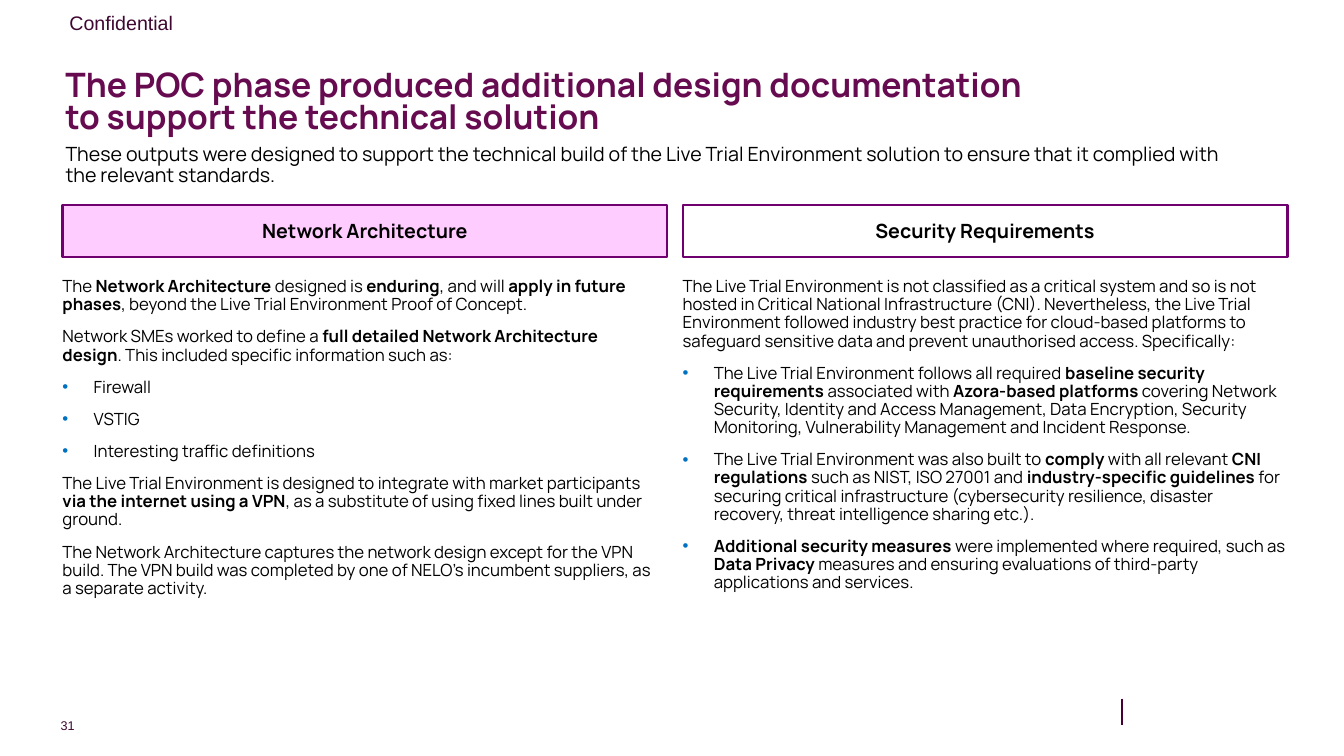
from dataclasses import dataclass

from lxml.etree import SubElement
from pptx import Presentation
from pptx.dml.color import RGBColor
from pptx.enum.shapes import MSO_CONNECTOR, MSO_SHAPE
from pptx.enum.text import MSO_ANCHOR, PP_ALIGN
from pptx.oxml.ns import qn
from pptx.util import Inches, Pt


@dataclass(frozen=True)
class Theme:
    """Colours, fonts and type sizes of the slide."""
    ink: str = "000000"
    title: str = "670B50"
    footer: str = "3F0731"
    rule: str = "460033"
    border: str = "700070"
    highlight: str = "FFCCFF"
    plain: str = "FFFFFF"
    bullet: str = "0070C0"
    text_font: str = "Manrope"
    label_font: str = "Arial"
    title_size: int = 24
    heading_size: int = 14
    body_size: int = 12
    number_size: int = 9


THEME = Theme()
MARGIN, COLUMN_WIDTH, GUTTER = 0.62, 6, 0.15
HEADING_TOP, HEADING_HEIGHT = 2.03, 0.52
BODY_TOP, BODY_HEIGHT = 2.71, 3.69
BULLET_INDENT = 0.31

TITLE = [
    "The POC phase produced additional design documentation",
    "to support the technical solution",
]
SUBTITLE = (
    "These outputs were designed to support the technical build of the Live Trial Environment "
    "solution to ensure that it complied with the relevant standards."
)
NETWORK = [
    "The **Network Architecture **designed is** enduring**, and will **apply in future phases**, "
    "beyond the Live Trial Environment Proof of Concept.",
    "Network SMEs worked to define a **full detailed Network Architecture design**. "
    "This included specific information such as:",
    "• Firewall",
    "• VSTIG",
    "• Interesting traffic definitions",
    "The Live Trial Environment is designed to integrate with market participants "
    "**via the internet using a VPN**, as a substitute of using fixed lines built under ground.",
    "The Network Architecture captures the network design except for the VPN build. The VPN build "
    "was completed by one of NELO’s incumbent suppliers, as a separate activity.",
]
SECURITY = [
    "The Live Trial Environment is not classified as a critical system and so is not hosted in "
    "Critical National Infrastructure (CNI). Nevertheless, the Live Trial Environment followed "
    "industry best practice for cloud-based platforms to safeguard sensitive data and prevent "
    "unauthorised access. Specifically:",
    "• The Live Trial Environment follows all required **baseline security requirements **"
    "associated with **Azora-based platforms **covering Network Security, Identity and Access "
    "Management, Data Encryption, Security Monitoring, Vulnerability Management and Incident "
    "Response.",
    "• The Live Trial Environment was also built to **comply** with all relevant "
    "**CNI regulations **such as NIST, ISO 27001 and **industry-specific guidelines **for "
    "securing critical infrastructure (cybersecurity resilience, disaster recovery, threat "
    "intelligence sharing etc.).",
    "• **Additional security measures **were implemented where required, such as "
    "**Data Privacy **measures and ensuring evaluations of third-party applications and services.",
]
COLUMNS = [
    ("Network Architecture", THEME.highlight, NETWORK, 0.1),
    ("Security Requirements", THEME.plain, SECURITY, 0),
]


def rgb(colour):
    """Turn a theme colour into an RGBColor."""
    return RGBColor.from_string(colour)


def style_font(font, size, colour, name=THEME.text_font, bold=None):
    """Apply the type settings to a font."""
    font.name, font.size, font.bold = name, Pt(size), bold
    font.color.rgb = rgb(colour)


def add_bullet(paragraph):
    """Give a paragraph a coloured bullet and a hanging indent."""
    properties = paragraph._p.get_or_add_pPr()
    properties.set("marL", str(Inches(BULLET_INDENT)))
    properties.set("indent", str(-Inches(BULLET_INDENT)))
    bullet_colour = SubElement(properties, qn("a:buClr"))
    SubElement(bullet_colour, qn("a:srgbClr"), val=THEME.bullet)
    SubElement(properties, qn("a:buFont"), typeface=THEME.label_font)
    SubElement(properties, qn("a:buChar"), char="•")


def add_runs(paragraph, text):
    """Write text whose double asterisks switch bold on and off."""
    for position, part in enumerate(text.split("**")):
        if part:
            run = paragraph.add_run()
            run.text = part
            if position % 2:
                run.font.bold = True


def add_text(slide, box, lines, size, colour, font=THEME.text_font, bold=None,
             insets=(0, 0.05, 0.1, 0.05), line_spacing=None, gap=0, wrap=True):
    """Add a text box with one paragraph per line."""
    frame = slide.shapes.add_textbox(*map(Inches, box)).text_frame
    frame.word_wrap = wrap
    (frame.margin_left, frame.margin_top,
     frame.margin_right, frame.margin_bottom) = map(Inches, insets)
    for index, line in enumerate(lines):
        paragraph = frame.add_paragraph() if index else frame.paragraphs[0]
        if line.startswith("• "):
            add_bullet(paragraph)
        add_runs(paragraph, line.removeprefix("• "))
        style_font(paragraph.font, size, colour, font, bold)
        if line_spacing:
            paragraph.line_spacing = line_spacing
        if index and gap:
            paragraph.space_before = Pt(gap)
    return frame


def add_heading(slide, left, text, fill):
    """Add the bordered heading of a column."""
    heading = slide.shapes.add_shape(
        MSO_SHAPE.RECTANGLE,
        *map(Inches, (left, HEADING_TOP, COLUMN_WIDTH, HEADING_HEIGHT)))
    heading.shadow.inherit = False
    heading.fill.solid()
    heading.fill.fore_color.rgb = rgb(fill)
    heading.line.color.rgb = rgb(THEME.border)
    heading.line.width = Pt(1.5)
    frame = heading.text_frame
    frame.vertical_anchor = MSO_ANCHOR.MIDDLE
    paragraph = frame.paragraphs[0]
    paragraph.alignment = PP_ALIGN.CENTER
    add_runs(paragraph, text)
    style_font(paragraph.font, THEME.heading_size, THEME.ink, bold=True)


def add_footer_rule(slide, x, top, bottom):
    """Add the short vertical rule at the foot of the slide."""
    rule = slide.shapes.add_connector(
        MSO_CONNECTOR.STRAIGHT, *map(Inches, (x, top, x, bottom)))
    rule.line.color.rgb = rgb(THEME.rule)
    rule.line.width = Pt(1.5)
    SubElement(rule._element.spPr, qn("a:effectLst"))


def main():
    """Build and save the slide."""
    deck = Presentation()
    deck.slide_width, deck.slide_height = Inches(13.33), Inches(7.5)
    slide = deck.slides.add_slide(deck.slide_layouts[6])

    number = add_text(slide, (0.59, 7.12, 0.15, 0.15), ["31"], THEME.number_size, THEME.footer,
                      THEME.label_font, insets=(0, 0, 0, 0), wrap=False)
    number.vertical_anchor = MSO_ANCHOR.MIDDLE
    number.paragraphs[0].alignment = PP_ALIGN.RIGHT
    add_text(slide, (0.59, 0.06, 5, 0.34), ["Confidential"], THEME.heading_size, THEME.footer,
             THEME.label_font, insets=(0.1, 0.05, 0.1, 0.05))
    add_footer_rule(slide, 11.13, 6.93, 7.19)

    for index, (heading, fill, body, right_inset) in enumerate(COLUMNS):
        left = MARGIN + index * (COLUMN_WIDTH + GUTTER)
        add_heading(slide, left, heading, fill)
        add_text(slide, (left, BODY_TOP, COLUMN_WIDTH, BODY_HEIGHT), body, THEME.body_size,
                 THEME.ink, insets=(0, 0.05, right_inset, 0.05), line_spacing=0.9, gap=10)

    add_text(slide, (0.65, 0.66, 11.5, 0.8), TITLE, THEME.title_size, THEME.title,
             bold=True, line_spacing=0.8)
    add_text(slide, (0.65, 1.38, 11.82, 0.52), [SUBTITLE], THEME.heading_size, THEME.ink,
             line_spacing=0.9)
    deck.save("out.pptx")


if __name__ == "__main__":
    main()
